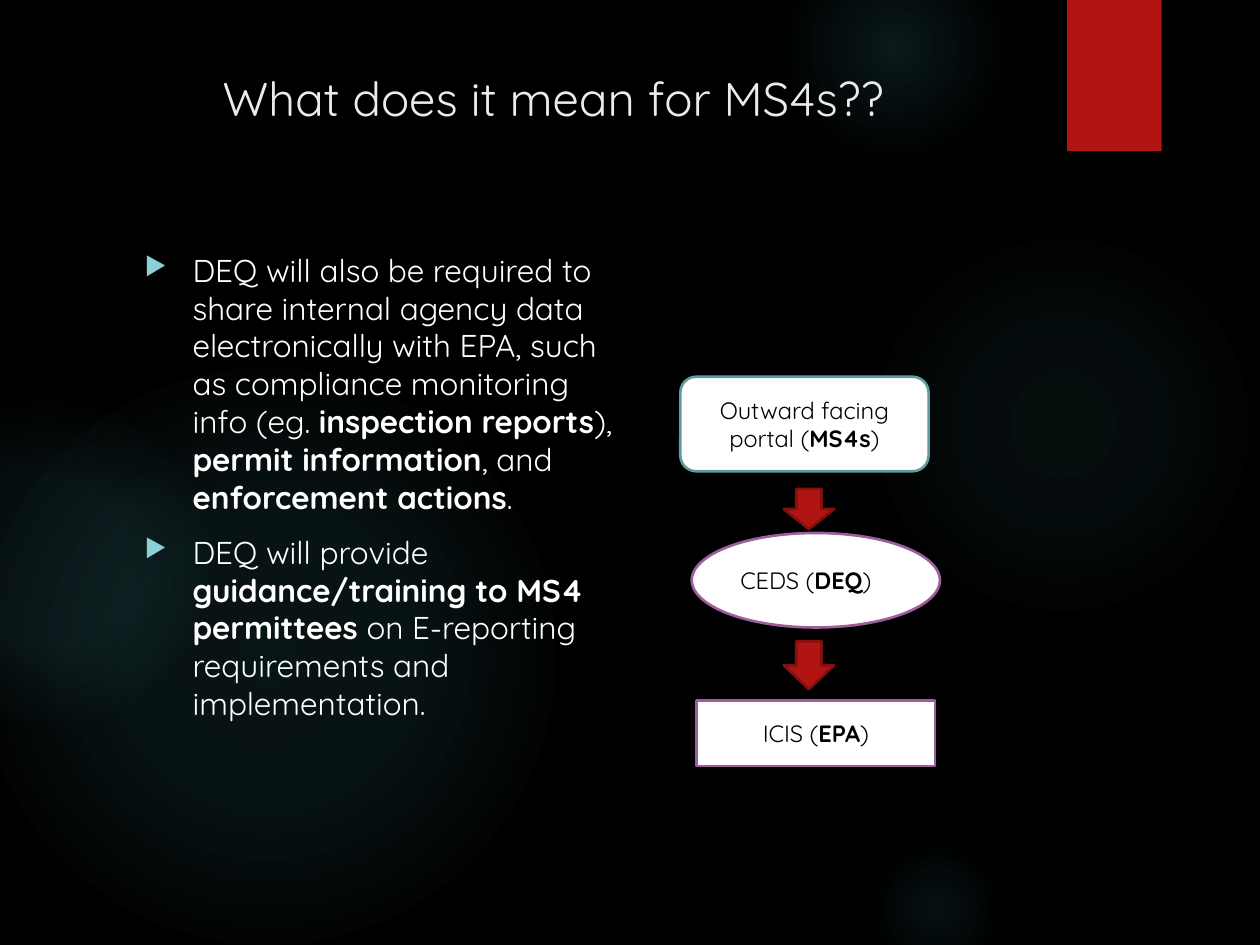
from lxml import etree
from pptx import Presentation
from pptx.dml.color import RGBColor
from pptx.enum import shapes, text
from pptx.oxml import parse_xml
from pptx.oxml.ns import nsdecls, qn
from pptx.util import Inches, Pt

FONT = "Quicksand"
COLORS = {
    "background": "000000", "glow": "50B9C1", "red": "B01513", "dark_red": "82100E",
    "title": "EBEBEB", "white": "FFFFFF", "black": "000000", "bullet": "8AD0D6",
    "teal": "5F9C9D", "purple": "9E5E9B",
}
KINDS = shapes.MSO_SHAPE
CENTER, LEFT = text.PP_ALIGN.CENTER, text.PP_ALIGN.LEFT

TITLE = "What does it mean for MS4s??"
GLOWS = [
    (6.89, 1.83, 3.08, [(0, 7), (36, 6), (69, 0)]),
    (6.22, -0.5, 1.75, [(0, 14), (36, 7), (73, 0)]),
    (6.89, 6.67, 1.08, [(0, 9), (36, 5), (66, 0)]),
    (-0.17, 2.92, 4.58, [(0, 11), (36, 10), (75, 0)]),
    (-0.92, 3.17, 2.58, [(0, 8), (36, 8), (72, 0)]),
]
# Pieces alternate between regular and bold, starting with regular.
BULLETS = [
    ["DEQ will also be required to share internal agency data electronically with EPA, "
     "such as compliance monitoring info (eg. ", "inspection reports", "), ",
     "permit information", ", and ", "enforcement actions", "."],
    ["DEQ will provide ", "guidance/training to MS4 permittees",
     " on E-reporting requirements and implementation."],
]
STEPS = [
    (KINDS.ROUNDED_RECTANGLE, (5.4, 2.99, 1.97, 0.75), "teal", CENTER,
     ["Outward facing portal (", "MS4s", ")"]),
    (KINDS.OVAL, (5.49, 4.23, 1.97, 0.75), "purple", LEFT, ["CEDS (", "DEQ", ")"]),
    (KINDS.RECTANGLE, (5.53, 5.56, 1.89, 0.52), "purple", CENTER, ["ICIS (", "EPA", ")"]),
]
ARROWS = [(6.22, 3.88, 0.4, 0.32), (6.22, 5.09, 0.4, 0.38)]


def color(name):
    return RGBColor.from_string(COLORS[name])


def place(shape, area):
    shape.left, shape.top, shape.width, shape.height = map(Inches, area)


def add_shape(page, kind, area, fill=None, line=None):
    shape = page.shapes.add_shape(kind, *map(Inches, area))
    shape.shadow.inherit = False
    if fill:
        shape.fill.solid()
        shape.fill.fore_color.rgb = color(fill)
    if line:
        shape.line.color.rgb = color(line)
        shape.line.width = Pt(1.5)
    else:
        shape.line.fill.background()
    return shape


def add_glow(page, left, top, size, stops):
    shape = add_shape(page, KINDS.OVAL, (left, top, size, size))
    stop_xml = "".join(
        f'<a:gs pos="{place * 1000}"><a:srgbClr val="{COLORS["glow"]}">'
        f'<a:alpha val="{opacity * 1000}"/></a:srgbClr></a:gs>' for place, opacity in stops)
    gradient = parse_xml(
        f'<a:gradFill {nsdecls("a")} rotWithShape="1"><a:gsLst>{stop_xml}</a:gsLst>'
        '<a:path path="circle"><a:fillToRect l="50000" t="50000" r="50000" b="50000"/>'
        '</a:path></a:gradFill>')
    shape.element.spPr.find(qn("a:prstGeom")).addnext(gradient)


def write(para, pieces, size, name, align=LEFT):
    para.alignment = align
    for index, piece in enumerate(pieces):
        span = para.add_run()
        span.text = piece
        span.font.name = FONT
        span.font.size = Pt(size)
        span.font.bold = index % 2 == 1
        span.font.color.rgb = color(name)


def add_bullet(para):
    para.space_before = Pt(10)
    props = para._p.get_or_add_pPr()
    props.set("marL", str(Inches(0.38)))
    props.set("indent", str(Inches(-0.38)))
    tint = etree.SubElement(props, qn("a:buClr"))
    etree.SubElement(tint, qn("a:srgbClr"), val=COLORS["bullet"])
    etree.SubElement(props, qn("a:buSzPct"), val="80000")
    etree.SubElement(props, qn("a:buChar"), char="▶")


def add_title(page):
    title = page.shapes.title
    title.element.getparent().append(title.element)
    place(title, (0.53, 0.5, 7.72, 1.53))
    title.text_frame.vertical_anchor = text.MSO_ANCHOR.TOP
    write(title.text_frame.paragraphs[0], [TITLE], 27, "title", CENTER)


def add_body(page):
    frame = page.shapes.add_textbox(*map(Inches, (1.05, 1.5, 3.95, 5.34))).text_frame
    frame.word_wrap = True
    frame.margin_top = Inches(0.49)
    for index, pieces in enumerate(BULLETS):
        para = frame.add_paragraph() if index else frame.paragraphs[0]
        add_bullet(para)
        write(para, pieces, 18, "white")


def add_flow(page):
    for kind, area, line, align, pieces in STEPS:
        frame = add_shape(page, kind, area, "white", line).text_frame
        frame.word_wrap = True
        frame.vertical_anchor = text.MSO_ANCHOR.MIDDLE
        write(frame.paragraphs[0], pieces, 13.5, "black", align)
    for area in ARROWS:
        add_shape(page, KINDS.DOWN_ARROW, area, "red", "dark_red")


def main():
    deck = Presentation()
    deck.slide_width, deck.slide_height = Inches(10), Inches(7.5)
    page = deck.slides.add_slide(deck.slide_layouts[5])
    page.background.fill.solid()
    page.background.fill.fore_color.rgb = color("background")
    for glow in GLOWS:
        add_glow(page, *glow)
    add_shape(page, KINDS.RECTANGLE, (8.47, 0, 0.75, 1.2), "red")
    add_title(page)
    add_body(page)
    add_flow(page)
    deck.save("out.pptx")


if __name__ == "__main__":
    main()
